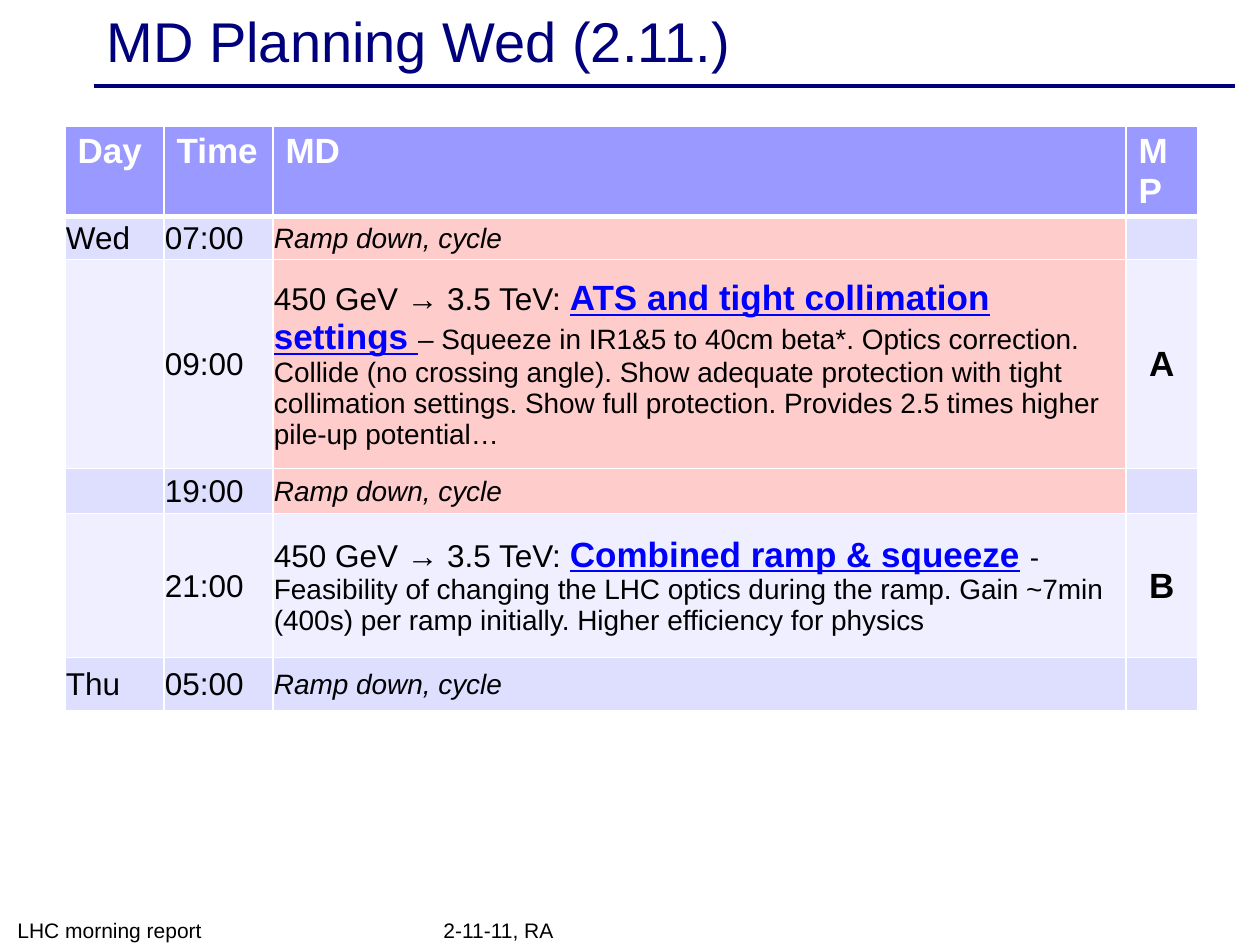
import pptx
import pptx.dml.color
import pptx.enum.shapes
import pptx.enum.text
import pptx.oxml.ns
import pptx.util
from lxml import etree

# Theme
THEME = {
    "font": "Arial",
    "navy": "00007D", "white": "FFFFFF", "black": "000000", "link": "0000FF",
    "header": "9999FF", "odd": "DEDEFF", "even": "EFEFFF", "highlight": "FFCCCC",
    "title": 32, "heading": 20, "body": 18, "detail": 16, "footer": 12,
    "rule": 2, "border": 1, "header_border": 3,
}

# Run styles: size, colour, and the font flags that are on
STYLES = {
    "title": ("title", "navy", ()),
    "header": ("heading", "white", ("bold",)),
    "body": ("body", "black", ()),
    "cycle": ("detail", "black", ("italic",)),
    "detail": ("detail", "black", ()),
    "study": ("heading", "link", ("bold", "underline")),
    "gap": ("heading", "black", ()),
    "grade": ("heading", "black", ("bold",)),
    "footer": ("footer", "black", ()),
}

# Content
TITLE = "MD Planning Wed (2.11.)"
HEADERS = ["Day", "Time", "MD", "MP"]
ENERGY = ("450 GeV → 3.5 TeV: ", "body")
CYCLE = [("Ramp down, cycle", "cycle")]
COLLIMATION = [
    ENERGY,
    ("ATS and tight collimation settings ", "study"),
    ("– Squeeze in IR1&5 to 40cm beta*. Optics correction. Collide (no crossing "
     "angle). Show adequate protection with tight collimation settings. Show full "
     "protection. Provides 2.5 times higher pile-up potential…", "detail"),
]
SQUEEZE = [
    ENERGY,
    ("Combined ramp & squeeze", "study"),
    (" ", "gap"),
    ("- Feasibility of changing the LHC optics during the ramp. Gain ~7min (400s) "
     "per ramp initially. Higher efficiency for physics", "detail"),
]
# Day, time, study runs, grade, highlighted
SCHEDULE = [
    ("Wed", "07:00", CYCLE, "", True),
    ("", "09:00", COLLIMATION, "A", True),
    ("", "19:00", CYCLE, "", True),
    ("", "21:00", SQUEEZE, "B", False),
    ("Thu", "05:00", CYCLE, "", False),
]
FOOTERS = [
    ("LHC morning report", (5, 912, 294, 37)),
    ("2-11-11, RA", (431, 913, 399, 36)),
]

# Layout in px, 126 to the inch
SLIDE_SIZE = (1260, 945)
TITLE_BOX = (94, 4, 1134, 72)
RULE = (94, 86, 1235, 86)
TABLE_ORIGIN = (65, 126)
COLUMNS = [99, 109, 853, 72]
ROWS = [52, 43, 209, 45, 144, 53]
ALIGN = pptx.enum.text.PP_ALIGN
ANCHOR = pptx.enum.text.MSO_ANCHOR


def px(*lengths):
    return [pptx.util.Emu(round(length * 914400 / 126)) for length in lengths]


def color(name):
    return pptx.dml.color.RGBColor.from_string(THEME[name])


def write(text_frame, runs, align=ALIGN.LEFT):
    paragraph = text_frame.paragraphs[0]
    paragraph.alignment = align
    for text, style in runs:
        size, color_name, flags = STYLES[style]
        run = paragraph.add_run()
        run.text = text
        run.font.name = THEME["font"]
        run.font.size = pptx.util.Pt(THEME[size])
        run.font.color.rgb = color(color_name)
        for flag in ("bold", "italic", "underline"):
            setattr(run.font, flag, flag in flags)


def add_borders(cell, top, bottom):
    properties = cell._tc.get_or_add_tcPr()
    widths = {"lnL": "border", "lnR": "border", "lnT": top, "lnB": bottom}
    for side, width in widths.items():
        line = etree.SubElement(properties, pptx.oxml.ns.qn(f"a:{side}"),
                                w=str(pptx.util.Pt(THEME[width])))
        fill = etree.SubElement(line, pptx.oxml.ns.qn("a:solidFill"))
        etree.SubElement(fill, pptx.oxml.ns.qn("a:srgbClr"), val=THEME["white"])


def format_cell(cell, fill, top="border", bottom="border"):
    add_borders(cell, top, bottom)
    cell.fill.solid()
    cell.fill.fore_color.rgb = color(fill)


def add_title(slide):
    title = slide.shapes.title
    title.left, title.top, title.width, title.height = px(*TITLE_BOX)
    title.text_frame.auto_size = pptx.enum.text.MSO_AUTO_SIZE.NONE
    title.text_frame.vertical_anchor = ANCHOR.MIDDLE
    write(title.text_frame, [(TITLE, "title")])


def add_rule(slide):
    rule = slide.shapes.add_connector(
        pptx.enum.shapes.MSO_CONNECTOR.STRAIGHT, *px(*RULE))
    rule.line.color.rgb = color("navy")
    rule.line.width = pptx.util.Pt(THEME["rule"])
    etree.SubElement(rule._element.spPr, pptx.oxml.ns.qn("a:effectLst"))


def add_schedule(slide):
    frame = slide.shapes.add_table(
        len(ROWS), len(COLUMNS), *px(*TABLE_ORIGIN, sum(COLUMNS), sum(ROWS)))
    table = frame.table
    for column, width in zip(table.columns, px(*COLUMNS)):
        column.width = width
    for row, height in zip(table.rows, px(*ROWS)):
        row.height = height

    # Header row
    for index, text in enumerate(HEADERS):
        cell = table.cell(0, index)
        format_cell(cell, "header", bottom="header_border")
        write(cell.text_frame, [(text, "header")])

    # Schedule rows, banded, with highlighted studies
    for index, (day, time, study, grade, highlighted) in enumerate(SCHEDULE, 1):
        band = "odd" if index % 2 else "even"
        top = "header_border" if index == 1 else "border"
        contents = [[(day, "body")], [(time, "body")], study, [(grade, "grade")]]
        for position, runs in enumerate(contents):
            cell = table.cell(index, position)
            fill = "highlight" if highlighted and runs is study else band
            format_cell(cell, fill, top=top)
            cell.vertical_anchor = ANCHOR.MIDDLE
            cell.margin_left = cell.margin_right = cell.margin_top = px(1)[0]
            cell.margin_bottom = 0
            align = ALIGN.CENTER if position == 3 else ALIGN.LEFT
            write(cell.text_frame, [run for run in runs if run[0]], align)


def add_footers(slide):
    for text, box in FOOTERS:
        text_frame = slide.shapes.add_textbox(*px(*box)).text_frame
        text_frame.word_wrap = True
        text_frame.vertical_anchor = ANCHOR.BOTTOM
        write(text_frame, [(text, "footer")])


def main():
    presentation = pptx.Presentation()
    presentation.slide_width, presentation.slide_height = px(*SLIDE_SIZE)
    slide = presentation.slides.add_slide(presentation.slide_layouts[5])
    add_rule(slide)
    add_title(slide)
    add_schedule(slide)
    add_footers(slide)
    presentation.save("out.pptx")


if __name__ == "__main__":
    main()
